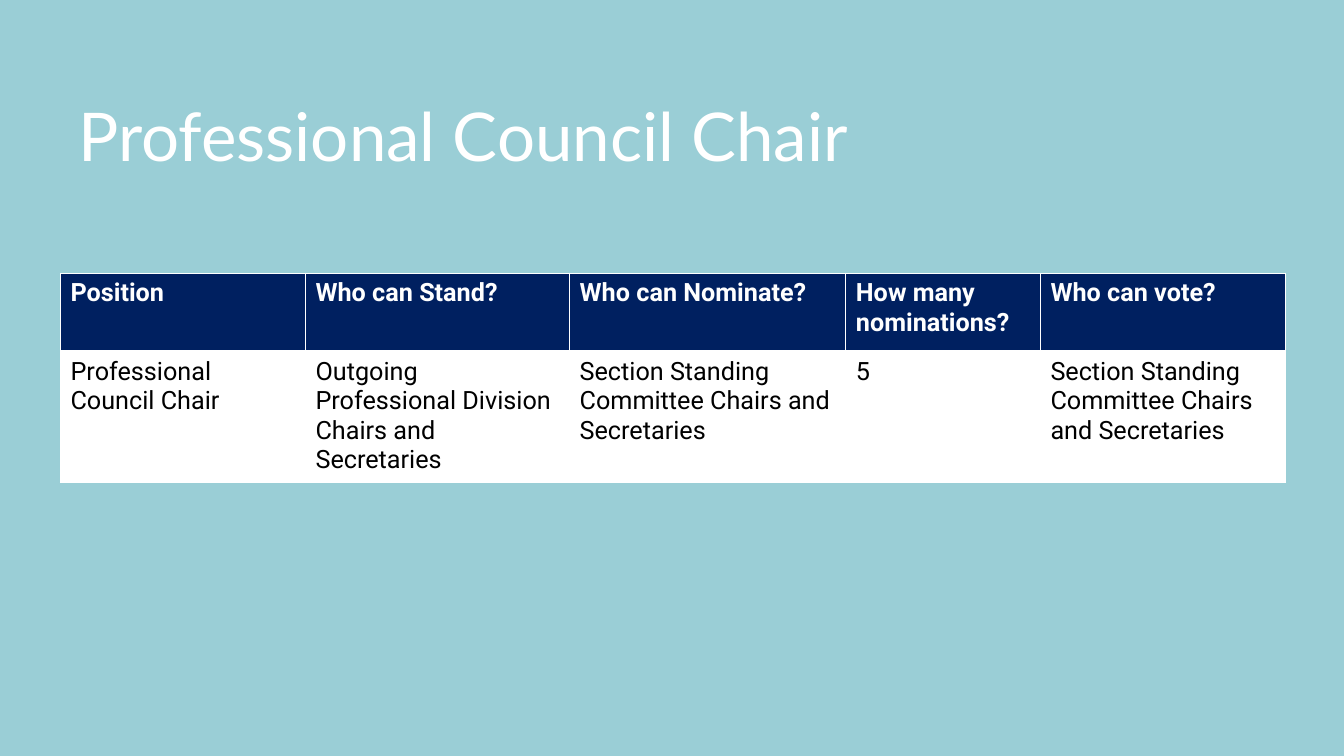
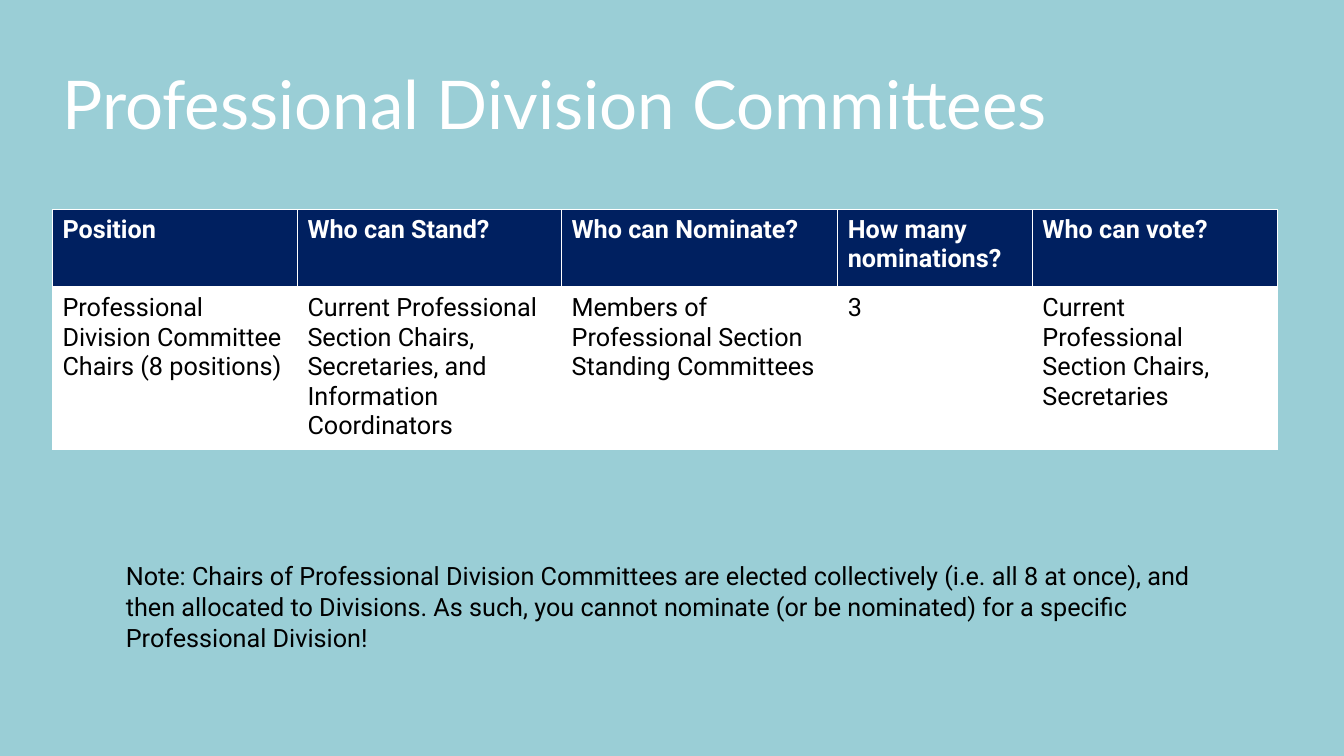
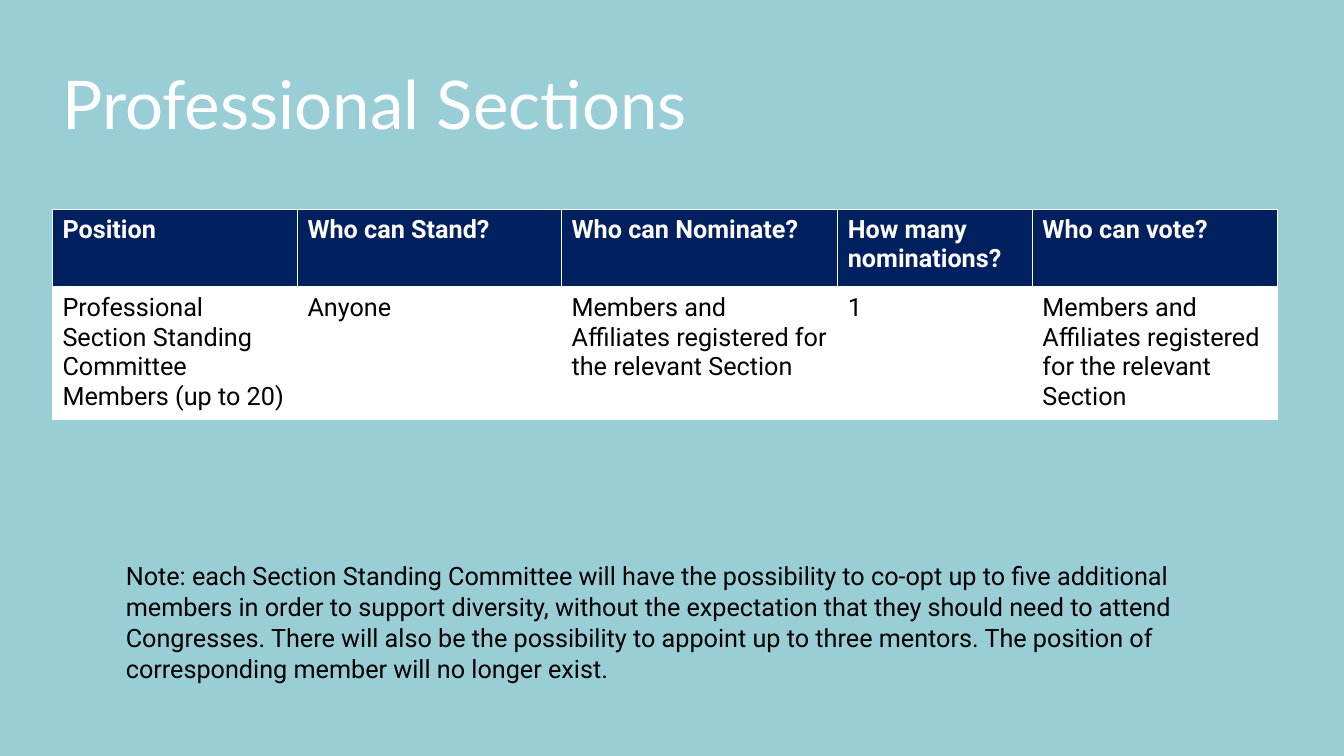
"""Build three slides on who may stand, nominate and vote in council elections."""
from lxml import etree
from pptx import Presentation
from pptx.dml.color import RGBColor
from pptx.enum.text import MSO_ANCHOR
from pptx.oxml.ns import qn
from pptx.util import Inches, Pt

TOP = MSO_ANCHOR.TOP

AQUA = RGBColor(0x9A, 0xCE, 0xD6)
NAVY = RGBColor(0x00, 0x20, 0x60)
WHITE = RGBColor(0xFF, 0xFF, 0xFF)
BLACK = RGBColor(0x00, 0x00, 0x00)

TITLE_FONT = "Lato"
BODY_FONT = "Roboto"
TITLE_SIZE = 48
BODY_SIZE = 18
NOTE_SPACING = 1.03

HEADINGS = ["Position", "Who can Stand?", "Who can Nominate?",
            "How many nominations?", "Who can vote?"]
COLUMN_WIDTHS = [2.43, 2.62, 2.74, 1.93, 2.43]
HEADER_HEIGHT = 0.78
LINE_HEIGHT = 0.3
ROW_PADDING = 0.1


def style(para, font_name, size, color, bold=False):
    para.font.name = font_name
    para.font.size = Pt(size)
    para.font.color.rgb = color
    para.font.bold = bold


def add_text(page, text, left, top, width, height, font_name, size, color):
    box = page.shapes.add_textbox(Inches(left), Inches(top), Inches(width), Inches(height))
    frame = box.text_frame
    frame.word_wrap = True
    frame.vertical_anchor = TOP
    para = frame.paragraphs[0]
    para.text = text
    style(para, font_name, size, color)
    return para


def add_title(page, text, left, top):
    add_text(page, text, left, top, 12.3, 1.18, TITLE_FONT, TITLE_SIZE, WHITE)


def add_note(page, text, line_count):
    height = line_count * LINE_HEIGHT + ROW_PADDING
    para = add_text(page, text, 1.15, 5.5, 10.96, height, BODY_FONT, BODY_SIZE, BLACK)
    para.line_spacing = NOTE_SPACING


def set_borders(cell, color, bottom_width):
    properties = cell._tc.get_or_add_tcPr()
    for side, width in (("L", 1), ("R", 1), ("T", 1), ("B", bottom_width)):
        line = etree.SubElement(properties, qn(f"a:ln{side}"), w=str(Pt(width)))
        fill = etree.SubElement(line, qn("a:solidFill"))
        etree.SubElement(fill, qn("a:srgbClr"), val=str(color))


def fill_row(table, row, texts, fill, color, bold, bottom_width):
    for column, text in enumerate(texts):
        cell = table.cell(row, column)
        cell.text = text
        style(cell.text_frame.paragraphs[0], BODY_FONT, BODY_SIZE, color, bold)
        set_borders(cell, WHITE, bottom_width)
        cell.fill.solid()
        cell.fill.fore_color.rgb = fill


def add_election_table(page, answers, left, top, line_count):
    body_height = line_count * LINE_HEIGHT + ROW_PADDING
    frame = page.shapes.add_table(
        2, len(HEADINGS), Inches(left), Inches(top),
        Inches(sum(COLUMN_WIDTHS)), Inches(HEADER_HEIGHT + body_height))
    table = frame.table
    for column, width in zip(table.columns, COLUMN_WIDTHS):
        column.width = Inches(width)
    for row, height in zip(table.rows, (HEADER_HEIGHT, body_height)):
        row.height = Inches(height)
    fill_row(table, 0, HEADINGS, NAVY, WHITE, True, 3)
    fill_row(table, 1, answers, WHITE, BLACK, False, 1)


def main():
    deck = Presentation()
    deck.slide_width, deck.slide_height = Inches(13.33), Inches(7.5)
    background = deck.slide_master.background.fill
    background.solid()
    background.fore_color.rgb = AQUA
    blank = deck.slide_layouts[6]

    page = deck.slides.add_slide(blank)
    add_title(page, "Professional Council Chair", 0.68, 0.89)
    add_election_table(page, [
        "Professional Council Chair",
        "Outgoing Professional Division Chairs and Secretaries",
        "Section Standing Committee Chairs and Secretaries",
        "5",
        "Section Standing Committee Chairs and Secretaries",
    ], 0.6, 2.71, 4)

    page = deck.slides.add_slide(blank)
    add_title(page, "Professional Division Committees", 0.52, 0.57)
    add_election_table(page, [
        "Professional Division Committee Chairs (8 positions)",
        "Current Professional Section Chairs, Secretaries, and Information Coordinators",
        "Members of Professional Section Standing Committees",
        "3",
        "Current Professional Section Chairs, Secretaries",
    ], 0.52, 2.08, 5)
    add_note(page, "Note: Chairs of Professional Division Committees are elected collectively "
             "(i.e. all 8 at once), and then allocated to Divisions. As such, you cannot "
             "nominate (or be nominated) for a specific Professional Division!", 3)

    page = deck.slides.add_slide(blank)
    add_title(page, "Professional Sections", 0.52, 0.57)
    add_election_table(page, [
        "Professional Section Standing Committee Members (up to 20)",
        "Anyone",
        "Members and Affiliates registered for the relevant Section",
        "1",
        "Members and Affiliates registered for the relevant Section",
    ], 0.52, 2.08, 4)
    add_note(page, "Note: each Section Standing Committee will have the possibility to co-opt "
             "up to five additional members in order to support diversity, without the "
             "expectation that they should need to attend Congresses. There will also be the "
             "possibility to appoint up to three mentors. The position of corresponding "
             "member will no longer exist.", 4)

    deck.save("out.pptx")


if __name__ == "__main__":
    main()
